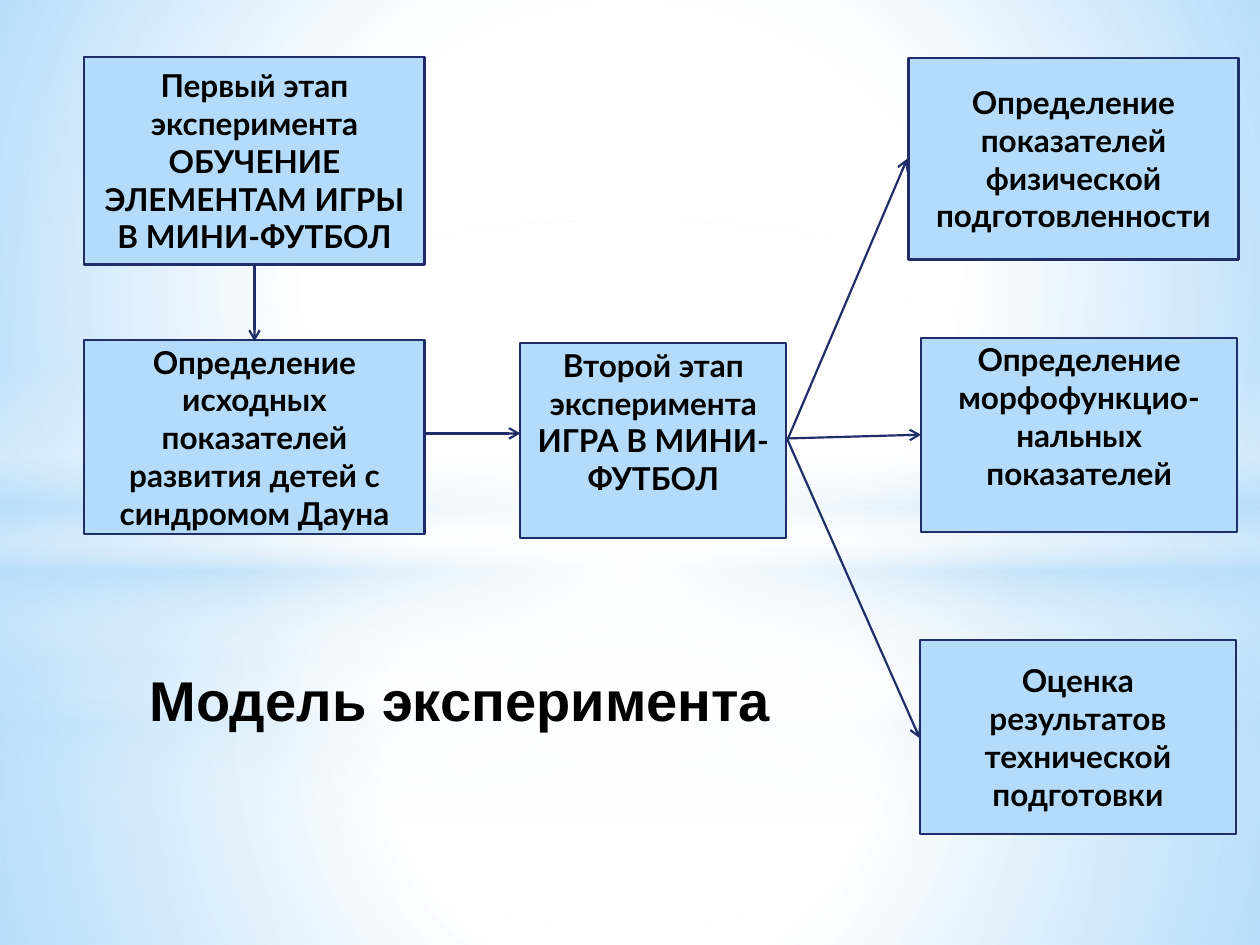
from lxml.etree import SubElement
from pptx import Presentation
from pptx.dml.color import RGBColor
from pptx.enum.shapes import MSO_CONNECTOR, MSO_SHAPE
from pptx.enum.text import MSO_ANCHOR, PP_ALIGN
from pptx.oxml import parse_xml
from pptx.oxml.ns import nsdecls, qn
from pptx.util import Inches, Pt

WHITE = RGBColor(0xFF, 0xFF, 0xFF)
SKY = RGBColor(0xB4, 0xDC, 0xFA)
NAVY = RGBColor(0x1F, 0x2E, 0x69)
BLACK = RGBColor(0, 0, 0)

BOX_FONT = {"name": "Lato", "size": Pt(18), "bold": True}
TITLE_FONT = {"name": "Arial", "size": Pt(32), "bold": True}
LINE_HEIGHT = 0.3

# Gradient stops: position %, colour, opacity %
BAND = [(0, WHITE, 0), (29, WHITE, 30), (45, SKY, 40),
        (55, WHITE, 26), (65, SKY, 60), (100, WHITE, 0)]


def glow(edge, *inner):
    return [*inner, (100, SKY, edge)]


# Background layers: shape, top, height, stops, radial
RECT, OVAL = MSO_SHAPE.RECTANGLE, MSO_SHAPE.OVAL
LAYERS = [
    (RECT, 5.58, 1.92, glow(79, (0, WHITE, 91), (37, WHITE, 76)), True),
    (RECT, 0, 5.58, glow(79, (0, WHITE, 89), (48, WHITE, 62)), True),
    (RECT, 4.12, 2.5, BAND, False),
    (OVAL, 1.75, 5.58, [(0, WHITE, 100), (56, WHITE, 0)], True),
    (RECT, 4.23, 3.27, glow(80, (0, WHITE, 92), (37, WHITE, 77)), True),
    (RECT, 0, 4.23, glow(80, (0, WHITE, 90), (48, WHITE, 63)), True),
    (RECT, 2.9, 2.5, BAND, False),
    (OVAL, 1.75, 5.58, [(0, WHITE, 100), (54, WHITE, 0)], True),
]

# Boxes: left, top, width, height, paragraphs, free lines below the text
BOXES = [
    (0.67, 0.45, 2.7, 1.65, ["Первый этап эксперимента", "ОБУЧЕНИЕ",
                             "ЭЛЕМЕНТАМ ИГРЫ В МИНИ-ФУТБОЛ"], 0),
    (0.67, 2.7, 2.7, 1.54, ["Определение исходных показателей развития "
                            "детей с синдромом Дауна"], 0),
    (4.13, 2.72, 2.11, 1.55, ["Второй этап эксперимента",
                              "ИГРА В МИНИ-ФУТБОЛ"], 1),
    (7.3, 5.08, 2.51, 1.54,
     ["Оценка результатов технической подготовки"], 0),
    (7.31, 2.68, 2.51, 1.54,
     ["Определение морфофункцио-нальных показателей"], 1),
    (7.21, 0.46, 2.62, 1.6,
     ["Определение показателей физической подготовленности"], 0),
]

# Arrows: x and y of the start, x and y of the end
ARROWS = [
    (2.02, 2.1, 2.02, 2.71),
    (3.37, 3.44, 4.13, 3.44),
    (6.24, 3.48, 7.31, 3.45),
    (6.25, 3.49, 7.2, 1.26),
    (6.25, 3.49, 7.3, 5.86),
]


def set_format(target, values):
    for key, value in values.items():
        setattr(target, key, value)


def add_text(p, text, font):
    r = p.add_run()
    r.text = text
    set_format(r.font, font)
    r.font.color.rgb = BLACK


def add_layer(s, kind, top, height, stops, radial):
    sp = s.shapes.add_shape(kind, 0, Inches(top), Inches(10), Inches(height))
    sp.shadow.inherit = False
    sp.line.fill.background()
    gs = "".join(
        f'<a:gs pos="{pos * 1000}"><a:srgbClr val="{color}">'
        f'<a:alpha val="{alpha * 1000}"/></a:srgbClr></a:gs>'
        for pos, color, alpha in stops)
    direction = '<a:lin ang="5400000" scaled="0"/>'
    if radial:
        direction = ('<a:path path="circle"><a:fillToRect l="50000" t="50000" '
                     'r="50000" b="50000"/></a:path>')
    sp._element.spPr.find(qn("a:prstGeom")).addnext(parse_xml(
        f'<a:gradFill {nsdecls("a")} rotWithShape="1">'
        f'<a:gsLst>{gs}</a:gsLst>{direction}</a:gradFill>'))


def add_box(s, left, top, width, height, paragraphs, free_lines):
    sp = s.shapes.add_shape(RECT, *map(Inches, (left, top, width, height)))
    sp.shadow.inherit = False
    sp.fill.solid()
    sp.fill.fore_color.rgb = SKY
    sp.line.color.rgb = NAVY
    sp.line.width = Pt(1.25)
    tf = sp.text_frame
    set_format(tf, {"word_wrap": True, "vertical_anchor": MSO_ANCHOR.MIDDLE,
                    "margin_bottom": Inches(0.05 + free_lines * LINE_HEIGHT)})
    for i, text in enumerate(paragraphs):
        p = tf.add_paragraph() if i else tf.paragraphs[0]
        p.alignment = PP_ALIGN.CENTER
        add_text(p, text, BOX_FONT)


def add_arrow(s, *ends):
    line = s.shapes.add_connector(MSO_CONNECTOR.STRAIGHT, *map(Inches, ends))
    line.line.color.rgb = NAVY
    line.line.width = Pt(1.25)
    spPr = line._element.spPr
    SubElement(spPr.find(qn("a:ln")), qn("a:tailEnd"), type="arrow")
    SubElement(spPr, qn("a:effectLst"))


def add_title(s, text):
    sp = s.shapes.add_textbox(*map(Inches, (1.09, 5.23, 5.13, 0.63)))
    tf = sp.text_frame
    tf.word_wrap = False
    add_text(tf.paragraphs[0], text, TITLE_FONT)


def main():
    prs = Presentation()
    prs.slide_width, prs.slide_height = Inches(10), Inches(7.5)
    s = prs.slides.add_slide(prs.slide_layouts[6])

    # Background
    for layer in LAYERS:
        add_layer(s, *layer)
    # Diagram
    for box in BOXES:
        add_box(s, *box)
    for arrow in ARROWS:
        add_arrow(s, *arrow)
    # Title
    add_title(s, "Модель эксперимента")

    prs.save("out.pptx")


if __name__ == "__main__":
    main()
